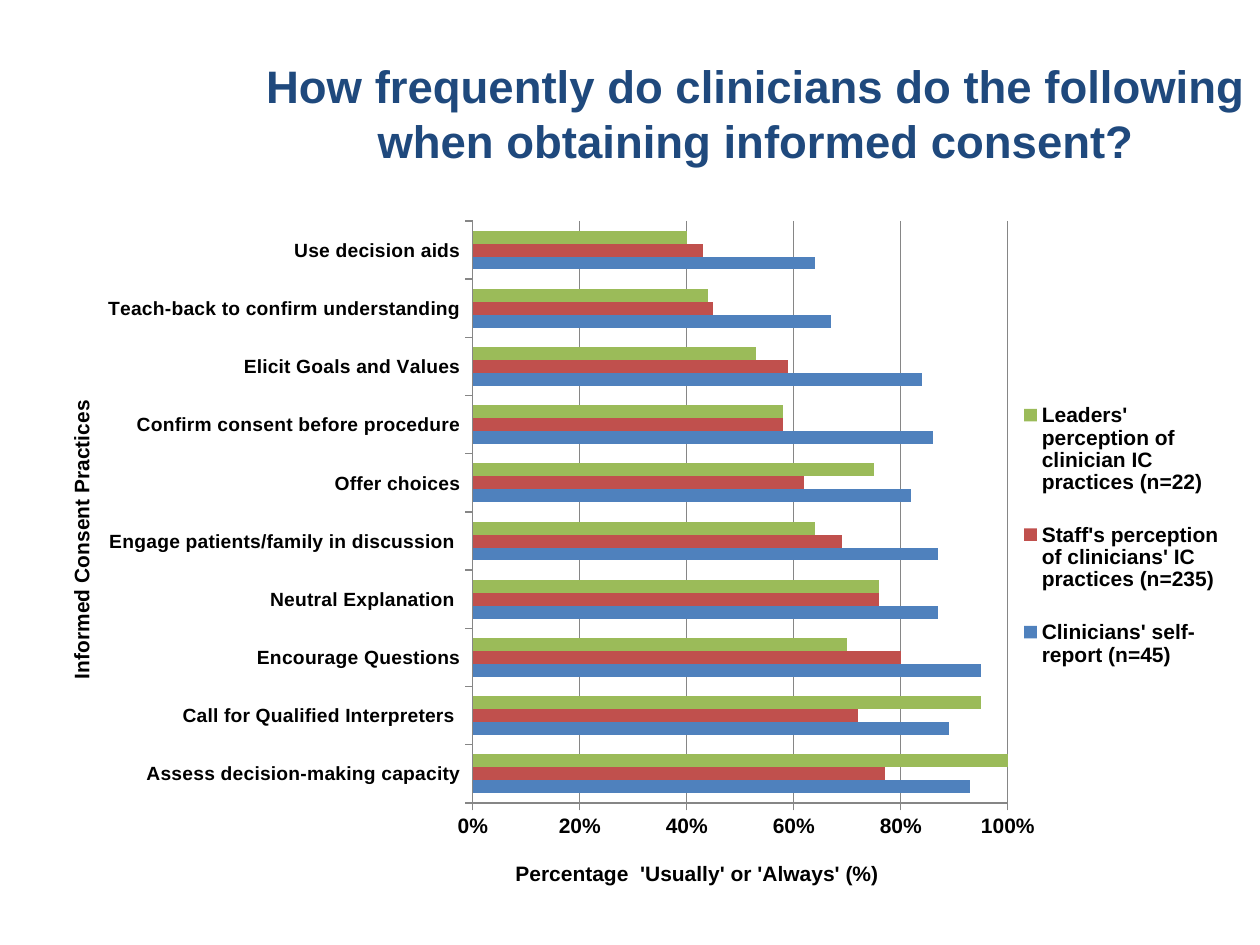
from lxml import etree
from pptx import Presentation, util as u
from pptx.chart.data import CategoryChartData
from pptx.dml.color import RGBColor
from pptx.enum import chart as ch, text
from pptx.oxml.ns import qn

PX = 914400 // 126
SLIDE = (1260, 945)
TITLE = "How frequently do clinicians do the following when obtaining informed consent?"
TITLE_BOX = dict(left=252, top=53, width=1008, height=120)
CHART_BOX = (53, 199, 1176, 693)
PRACTICES = [
    ("Assess decision-making capacity", 0.93, 0.77, 1),
    ("Call for Qualified Interpreters ", 0.89, 0.72, 0.95),
    ("Encourage Questions", 0.95, 0.8, 0.7),
    ("Neutral Explanation ", 0.87, 0.76, 0.76),
    ("Engage patients/family in discussion ", 0.87, 0.69, 0.64),
    ("Offer choices", 0.82, 0.62, 0.75),
    ("Confirm consent before procedure", 0.86, 0.58, 0.58),
    ("Elicit Goals and Values", 0.84, 0.59, 0.53),
    ("Teach-back to confirm understanding", 0.67, 0.45, 0.44),
    ("Use decision aids", 0.64, 0.43, 0.4),
]
GROUPS = [
    ("Clinicians' self-report (n=45)", "4F81BD"),
    ("Staff's perception of clinicians' IC practices (n=235)", "C0504D"),
    ("Leaders' perception of clinician IC practices (n=22)", "9BBB59"),
]
PRACTICE_TITLE = "Informed Consent Practices"
PERCENT_TITLE = "Percentage  'Usually' or 'Always' (%) "
PLOT_AREA = (473, 221, 535, 586)
LEGEND_AREA = (1020, 375, 204, 326)
PRACTICE_TITLE_AT = (65, 400)
PERCENT_TITLE_AT = (512, 862)


def rgb(value):
    return RGBColor.from_string(value)


def assign(target, values):
    for key, value in values.items():
        setattr(target, key, value)


def style(font, size, color="000000"):
    assign(font, dict(name="Arial", size=u.Pt(size), bold=True))
    font.color.rgb = rgb(color)


def place(element, index, box, inner=False):
    for old in element.findall(qn("c:layout")):
        element.remove(old)
    layout = etree.Element(qn("c:layout"))
    manual = etree.SubElement(layout, qn("c:manualLayout"))
    left, top, width, height = CHART_BOX
    fractions = [(box[0] - left) / width, (box[1] - top) / height]
    if len(box) == 4:
        fractions += [box[2] / width, box[3] / height]
    settings = [("layoutTarget", "inner")] if inner else []
    settings += [("xMode", "edge"), ("yMode", "edge")]
    settings += [(key, f"{value:.3f}") for key, value in zip("xywh", fractions)]
    for key, value in settings:
        etree.SubElement(manual, qn(f"c:{key}")).set("val", value)
    element.insert(index, layout)


def format_axis(axis, caption, caption_at, size):
    style(axis.tick_labels.font, size)
    axis.major_tick_mark = ch.XL_TICK_MARK.OUTSIDE
    axis.minor_tick_mark = ch.XL_TICK_MARK.NONE
    axis.format.line.color.rgb = rgb("868686")
    heading = axis.axis_title.text_frame
    heading.text = caption
    style(heading.paragraphs[0].runs[0].font, 12)
    place(axis.axis_title._element, 1, caption_at)


deck = Presentation()
deck.slide_width, deck.slide_height = (n * PX for n in SLIDE)
slide = deck.slides.add_slide(deck.slide_layouts[5])

title = slide.shapes.title
assign(title, {key: value * PX for key, value in TITLE_BOX.items()})
title.text_frame.text = TITLE
assign(title.text_frame, dict(word_wrap=True, vertical_anchor=text.MSO_ANCHOR.MIDDLE,
                              auto_size=text.MSO_AUTO_SIZE.NONE))
heading = title.text_frame.paragraphs[0]
heading.alignment = text.PP_ALIGN.CENTER
style(heading.runs[0].font, 26, "1F497D")

names, *ratings = zip(*PRACTICES)
survey = CategoryChartData(number_format="0%")
survey.categories = names
for (group, _), values in zip(GROUPS, ratings):
    survey.add_series(group, values)
chart = slide.shapes.add_chart(
    ch.XL_CHART_TYPE.BAR_CLUSTERED, *(n * PX for n in CHART_BOX), survey).chart
chart.has_title = False
assign(chart.font, dict(name="Arial", size=u.Pt(10)))
chart.font.color.rgb = rgb("000000")

bars = chart.plots[0]
assign(bars, dict(gap_width=150, overlap=0, vary_by_categories=False))
for series, (_, color) in zip(bars.series, GROUPS):
    series.format.fill.solid()
    series.format.fill.fore_color.rgb = rgb(color)
    series.invert_if_negative = False

format_axis(chart.category_axis, PRACTICE_TITLE, PRACTICE_TITLE_AT, 11)
percent = chart.value_axis
format_axis(percent, PERCENT_TITLE, PERCENT_TITLE_AT, 12)
assign(percent, dict(minimum_scale=0, maximum_scale=1, major_unit=0.2,
                     has_major_gridlines=True))
percent.major_gridlines.format.line.color.rgb = rgb("868686")
assign(percent.tick_labels, dict(number_format="0%", number_format_is_linked=False))

chart.has_legend = True
assign(chart.legend, dict(position=ch.XL_LEGEND_POSITION.RIGHT, include_in_layout=False))
style(chart.legend.font, 12)
place(chart.legend._element, 1, LEGEND_AREA)
place(chart._chartSpace.chart.plotArea, 0, PLOT_AREA, inner=True)

deck.save("out.pptx")
